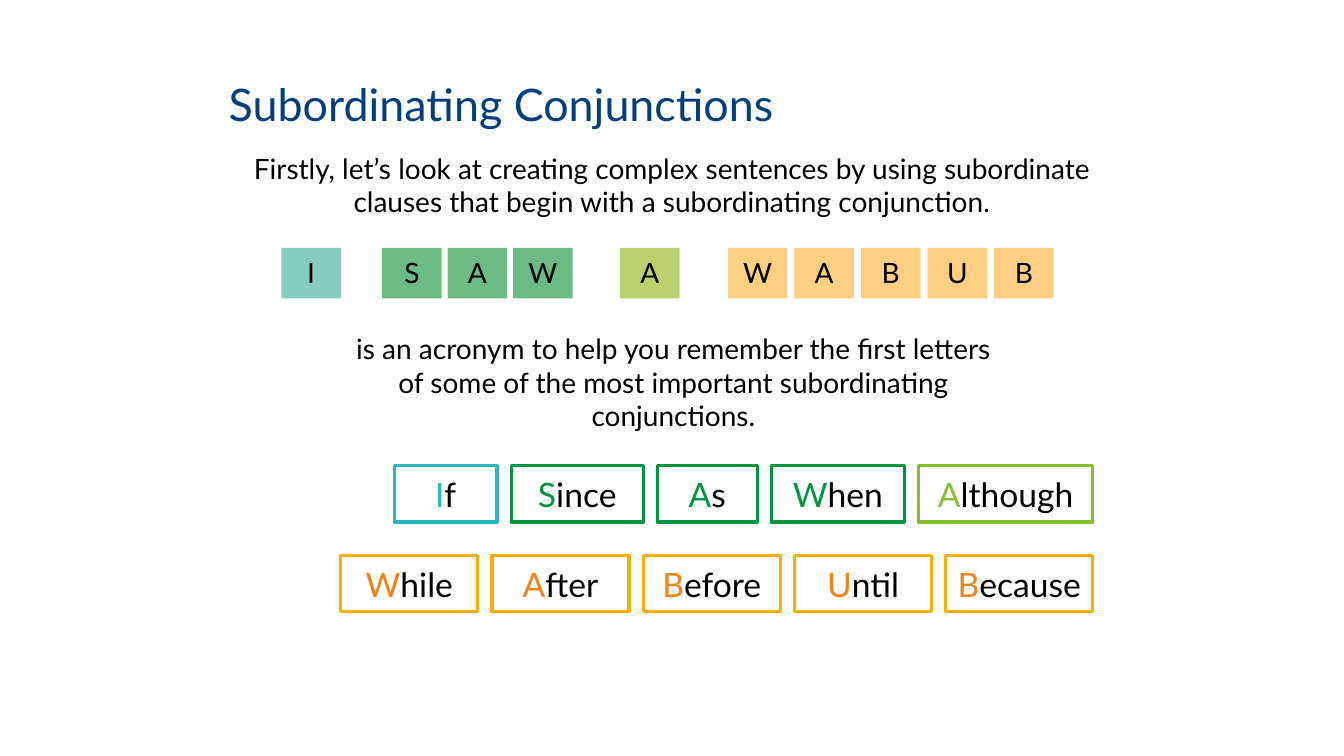
"""Build the slide on subordinating conjunctions and their acronym."""
from dataclasses import dataclass

from pptx import Presentation
from pptx import util as u
from pptx.dml.color import RGBColor
from pptx.enum import shapes, text

SCALE = 9144


@dataclass(frozen=True)
class Theme:
    font: str = "Lato"
    navy: str = "013F7C"
    black: str = "000000"
    white: str = "FFFFFF"
    mint: str = "87CCC0"
    sage: str = "6CBB83"
    lime: str = "B9D26D"
    peach: str = "FDCF82"
    teal: str = "2DB6BC"
    green: str = "009541"
    leaf: str = "87BD31"
    amber: str = "FAB001"
    orange: str = "F18213"
    title: int = 32
    body: int = 20
    word: int = 24
    edge: float = 2.25


@dataclass(frozen=True)
class Group:
    letters: str
    left: int
    step: int
    fill: str


@dataclass(frozen=True)
class Word:
    name: str
    width: int
    edge: str
    first: str


@dataclass(frozen=True)
class Row:
    left: int
    top: int
    words: tuple


THEME = Theme()
TILE_TOP, TILE_WIDTH, TILE_HEIGHT = 246, 59, 50
WORD_HEIGHT, WORD_GAP = 56, 14

GROUPS = (
    Group("I", 279, 0, THEME.mint),
    Group("SAW", 379, 65, THEME.sage),
    Group("A", 615, 0, THEME.lime),
    Group("WABUB", 722, 66, THEME.peach),
)
ROWS = (
    Row(391, 462, (
        Word("If", 102, THEME.teal, THEME.teal),
        Word("Since", 131, THEME.green, THEME.green),
        Word("As", 99, THEME.green, THEME.green),
        Word("When", 132, THEME.green, THEME.green),
        Word("Although", 173, THEME.leaf, THEME.leaf),
    )),
    Row(338, 551, (
        Word("While", 136, THEME.amber, THEME.orange),
        Word("After", 136, THEME.amber, THEME.orange),
        Word("Before", 136, THEME.amber, THEME.orange),
        Word("Until", 136, THEME.amber, THEME.orange),
        Word("Because", 146, THEME.amber, THEME.orange),
    )),
)


def px(size: int) -> u.Emu:
    """Turn px into EMU."""
    return u.Emu(size * SCALE)


def style(run, size: int, color: str) -> None:
    """Set the font of a run."""
    run.font.name = THEME.font
    run.font.size = u.Pt(size)
    run.font.color.rgb = RGBColor.from_string(color)


def center(frame) -> None:
    """Centre the text of a frame that grows with its wording."""
    frame.word_wrap = True
    frame.auto_size = text.MSO_AUTO_SIZE.SHAPE_TO_FIT_TEXT
    frame.vertical_anchor = text.MSO_ANCHOR.TOP
    frame.margin_left = frame.margin_right = 0
    frame.margin_top = frame.margin_bottom = px(8)
    frame.paragraphs[0].alignment = text.PP_ALIGN.CENTER


def add_box(slide, left: int, top: int, width: int, height: int, fill: str):
    """Add a plain filled rectangle with centred text."""
    box = slide.shapes.add_shape(
        shapes.MSO_SHAPE.RECTANGLE, px(left), px(top), px(width), px(height))
    box.shadow.inherit = False
    box.fill.solid()
    box.fill.fore_color.rgb = RGBColor.from_string(fill)
    box.line.fill.background()
    center(box.text_frame)
    return box


def add_title(slide, wording: str) -> None:
    """Add the heading."""
    frame = slide.shapes.add_textbox(px(217), px(52), px(899), px(109)).text_frame
    frame.word_wrap = True
    frame.vertical_anchor = text.MSO_ANCHOR.MIDDLE
    frame.text = wording
    frame.paragraphs[0].line_spacing = 0.9
    style(frame.paragraphs[0].runs[0], THEME.title, THEME.navy)


def add_note(slide, left: int, top: int, width: int, height: int, wording: str) -> None:
    """Add a centred block of body text."""
    frame = slide.shapes.add_textbox(px(left), px(top), px(width), px(height)).text_frame
    frame.text = wording
    center(frame)
    style(frame.paragraphs[0].runs[0], THEME.body, THEME.black)


def add_group(slide, group: Group) -> None:
    """Add one word of the acronym as a run of letter tiles."""
    for place, letter in enumerate(group.letters):
        tile = add_box(slide, group.left + place * group.step, TILE_TOP,
                       TILE_WIDTH, TILE_HEIGHT, group.fill)
        line = tile.text_frame.paragraphs[0]
        line.text = letter
        style(line.runs[0], THEME.body, THEME.black)


def add_row(slide, row: Row) -> None:
    """Add a row of outlined conjunctions with coloured initials."""
    left = row.left
    for word in row.words:
        box = add_box(slide, left, row.top, word.width, WORD_HEIGHT, THEME.white)
        box.line.color.rgb = RGBColor.from_string(word.edge)
        box.line.width = u.Pt(THEME.edge)
        line = box.text_frame.paragraphs[0]
        for part, color in ((word.name[0], word.first), (word.name[1:], THEME.black)):
            run = line.add_run()
            run.text = part
            style(run, THEME.word, color)
        left += word.width + WORD_GAP


def main() -> None:
    """Build and save the slide."""
    deck = Presentation()
    deck.slide_width, deck.slide_height = px(1333), px(750)
    slide = deck.slides.add_slide(deck.slide_layouts[6])
    add_title(slide, "Subordinating Conjunctions")
    add_note(slide, 249, 142, 835, 83,
             "Firstly, let’s look at creating complex sentences by using subordinate "
             "clauses that begin with a subordinating conjunction.")
    for group in GROUPS:
        add_group(slide, group)
    add_note(slide, 351, 321, 634, 117,
             "is an acronym to help you remember the first letters of some of the "
             "most important subordinating conjunctions.")
    for row in ROWS:
        add_row(slide, row)
    deck.save("out.pptx")


if __name__ == "__main__":
    main()
